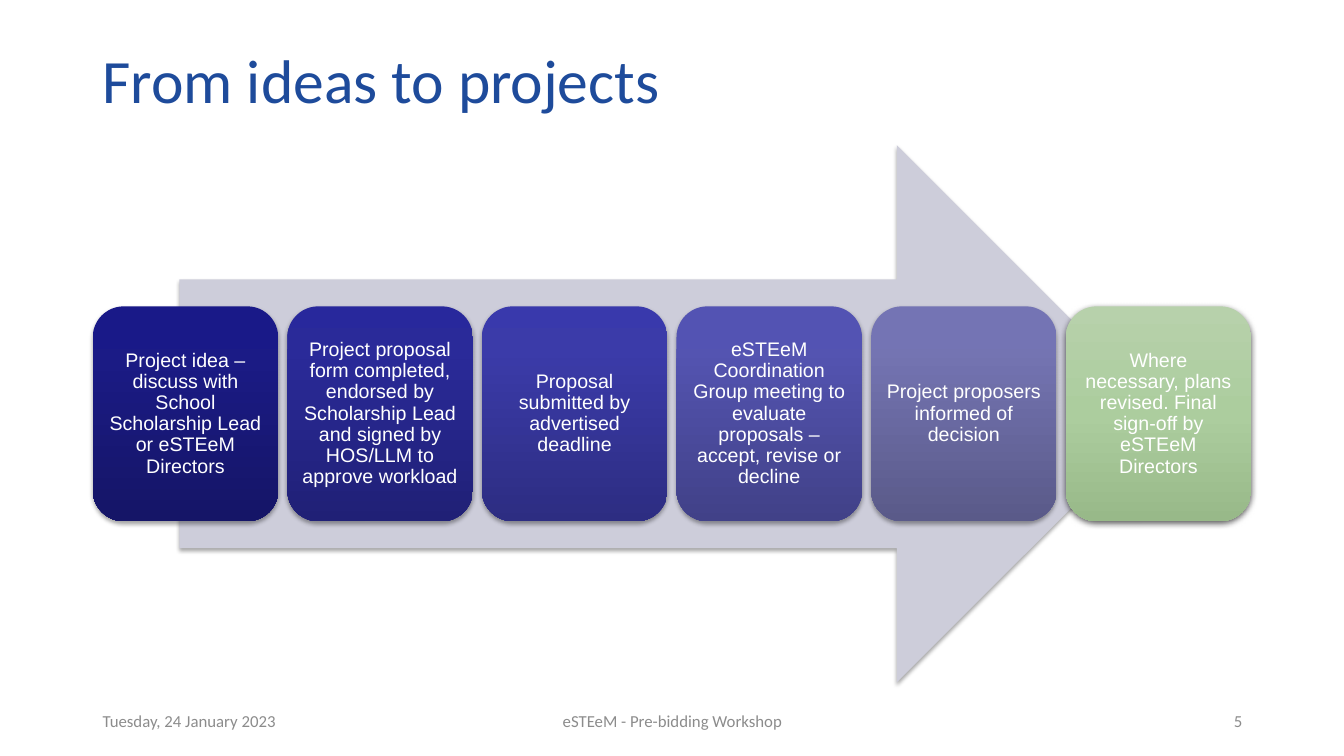
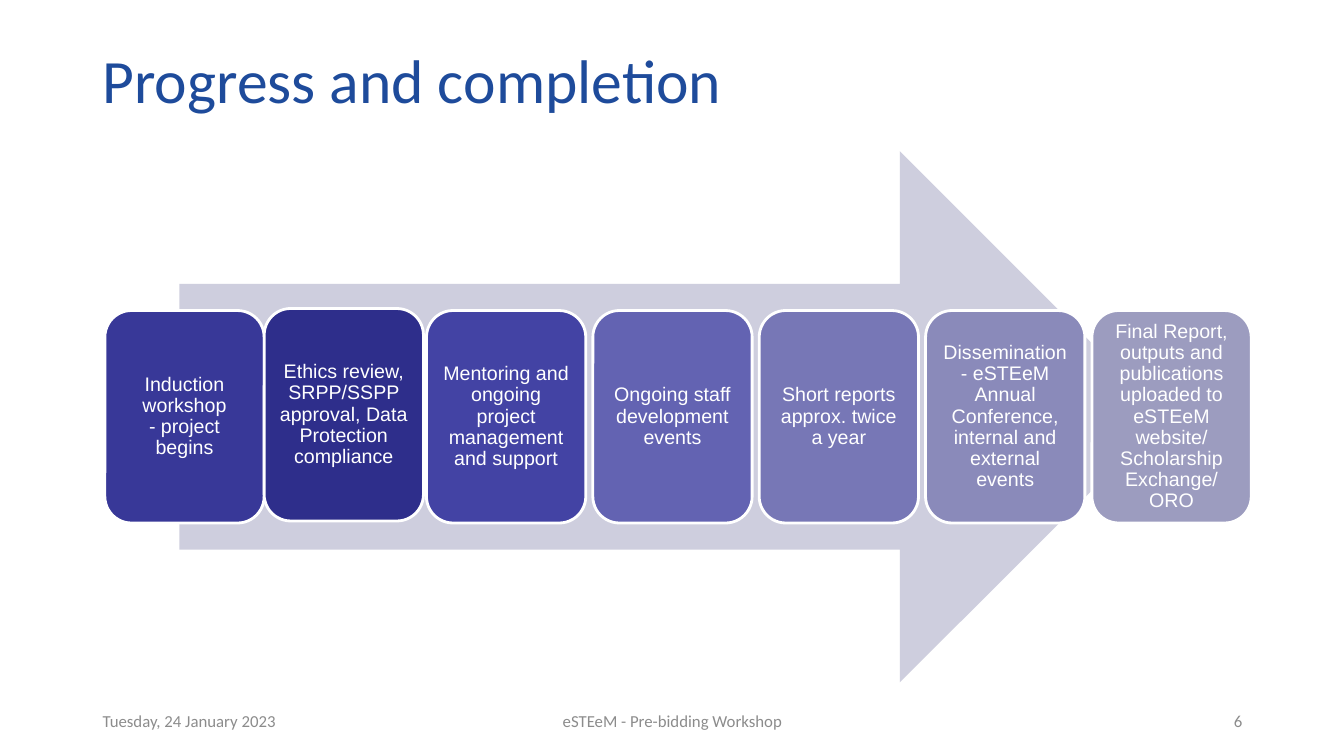
import copy
from dataclasses import dataclass
from typing import Optional

import lxml.etree
import pptx
import pptx.dml.color
import pptx.enum.shapes
import pptx.enum.text
import pptx.oxml.ns
import pptx.util

Inches = pptx.util.Inches
Pt = pptx.util.Pt
qn = pptx.oxml.ns.qn
ALIGN = pptx.enum.text.PP_ALIGN
SHAPES = pptx.enum.shapes.MSO_SHAPE


@dataclass(frozen=True)
class Theme:
    heading_font: str = "Calibri"
    step_font: str = "Arial"
    title_color: str = "1E4B9B"
    footer_color: str = "8C8C8C"
    white: str = "FFFFFF"
    title_size: int = 44
    footer_size: int = 12
    step_size: int = 14


@dataclass(frozen=True)
class Shadow:
    opacity: int
    blur: float
    distance: float


@dataclass(frozen=True)
class Step:
    """One box; several colors make a gradient from top to bottom."""
    text: str
    colors: tuple[str, ...]
    middle: int = 20
    shadow: Optional[Shadow] = None
    nudge: tuple[float, float] = (0, 0)


@dataclass(frozen=True)
class Process:
    title: str
    number: int
    arrow_top: float
    arrow_color: str
    first_left: float
    pitch: float
    step_width: float
    steps: tuple[Step, ...]
    outline: float = 0
    arrow_shadow: Optional[Shadow] = None


THEME = Theme()
MARGIN = 0.92
CONTENT_WIDTH = 11.5
ARROW_LEFT, ARROW_WIDTH, ARROW_BOTTOM = 1.78, 9.78, 6.77
SOFT = Shadow(35, 3.1, 1.8)
STRONG = Shadow(63, 4.5, 1.5)

PROCESSES = (
    Process(
        "From ideas to projects", 5, 1.44, "CDCDDA", MARGIN, 1.93, 1.84,
        (
            Step("Project idea – discuss with School Scholarship Lead or eSTEeM Directors",
                 ("191988", "1B1B86", "151567"), shadow=SOFT),
            Step("Project proposal form completed, endorsed by Scholarship Lead "
                 "and signed by HOS/LLM to approve workload",
                 ("28289C", "2A2A99", "202076"), shadow=SOFT),
            Step("Proposal submitted by advertised deadline",
                 ("3939AC", "3B3BA9", "2D2D82"), shadow=SOFT),
            Step("eSTEeM Coordination Group meeting to evaluate proposals – "
                 "accept, revise or decline",
                 ("5353B3", "5454B1", "414188"), shadow=SOFT),
            Step("Project proposers informed of decision",
                 ("7474B4", "7474B2", "5A5A89"), shadow=SOFT),
            Step("Where necessary, plans revised. Final sign-off by eSTEeM Directors",
                 ("B7D1AB", "ACCD9E", "98B989"), middle=50, shadow=STRONG),
        ),
        arrow_shadow=SOFT,
    ),
    Process(
        "Progress and completion", 6, 1.5, "CECEDE", 0.93, 1.65, 1.58,
        (
            Step("Induction workshop\n- project begins", ("383898",), nudge=(0.11, 0)),
            Step("Ethics review, SRPP/SSPP approval, Data Protection compliance",
                 ("2E2E8B",), nudge=(0.04, -0.02)),
            Step("Mentoring and ongoing project management and support", ("4343A4",)),
            Step("Ongoing staff development events", ("6363B2",)),
            Step("Short reports approx. twice a year", ("7777B6",)),
            Step("Dissemination - eSTEeM Annual Conference, internal and external events",
                 ("8A8ABA",)),
            Step("Final Report, outputs and publications uploaded to eSTEeM website/ "
                 "Scholarship Exchange/ ORO", ("9C9CBF",)),
        ),
        outline=2,
    ),
)


def rgb(code: str) -> pptx.dml.color.RGBColor:
    return pptx.dml.color.RGBColor.from_string(code)


def write(shape, text: str, font: str, size: int, color: str,
          align=ALIGN.LEFT, spacing: float = 1.0) -> None:
    frame = shape.text_frame
    frame.word_wrap = True
    frame.vertical_anchor = pptx.enum.text.MSO_ANCHOR.MIDDLE
    paragraph = frame.paragraphs[0]
    paragraph.alignment = align
    paragraph.line_spacing = spacing
    for index, line in enumerate(text.split("\n")):
        if index:
            paragraph.add_line_break()
        run = paragraph.add_run()
        run.text = line
        run.font.name = font
        run.font.size = Pt(size)
        run.font.color.rgb = rgb(color)


def add_label(slide, left: float, top: float, width: float, height: float):
    return slide.shapes.add_textbox(Inches(left), Inches(top), Inches(width), Inches(height))


def set_shadow(shape, shadow: Optional[Shadow]) -> None:
    shape.shadow.inherit = False
    if shadow is None:
        return
    effects = shape._element.spPr.find(qn("a:effectLst"))
    outer = lxml.etree.SubElement(
        effects, qn("a:outerShdw"), blurRad=str(Pt(shadow.blur)),
        dist=str(Pt(shadow.distance)), dir="5400000", rotWithShape="0")
    color = lxml.etree.SubElement(outer, qn("a:srgbClr"), val="000000")
    lxml.etree.SubElement(color, qn("a:alpha"), val=str(shadow.opacity * 1000))


def set_fill(shape, colors: tuple[str, ...], middle: int = 20) -> None:
    if len(colors) == 1:
        shape.fill.solid()
        shape.fill.fore_color.rgb = rgb(colors[0])
        return
    shape.fill.gradient()
    shape.fill.gradient_angle = 270
    stop_list = shape._element.spPr.find(".//" + qn("a:gsLst"))
    stop_list.append(copy.deepcopy(stop_list[0]))
    for stop, color, percent in zip(shape.fill.gradient_stops, colors, (0, middle, 100)):
        stop.color.rgb = rgb(color)
        stop.position = percent / 100


def add_block(slide, kind, left: float, top: float, width: float, height: float,
              outline: float = 0, shadow: Optional[Shadow] = None):
    block = slide.shapes.add_shape(
        kind, Inches(left), Inches(top), Inches(width), Inches(height))
    if outline:
        block.line.color.rgb = rgb(THEME.white)
        block.line.width = Pt(outline)
    else:
        block.line.fill.background()
    set_shadow(block, shadow)
    return block


def add_title_and_footer(slide, process: Process) -> None:
    write(add_label(slide, MARGIN, 0.4, CONTENT_WIDTH, 0.85), process.title,
          THEME.heading_font, THEME.title_size, THEME.title_color, spacing=0.9)
    footers = (
        ("Tuesday, 24 January 2023", MARGIN, 3, ALIGN.LEFT),
        ("eSTEeM - Pre-bidding Workshop", 4.42, 4.5, ALIGN.CENTER),
        (str(process.number), 9.42, 3, ALIGN.RIGHT),
    )
    for text, left, width, align in footers:
        write(add_label(slide, left, 6.95, width, 0.4), text, THEME.heading_font,
              THEME.footer_size, THEME.footer_color, align)


def add_process(slide, process: Process) -> None:
    """Draw the arrow and its steps, which fill the middle 40% of its height."""
    arrow_height = ARROW_BOTTOM - process.arrow_top
    arrow = add_block(slide, SHAPES.RIGHT_ARROW, ARROW_LEFT, process.arrow_top,
                      ARROW_WIDTH, arrow_height, shadow=process.arrow_shadow)
    set_fill(arrow, (process.arrow_color,))
    step_top = process.arrow_top + 0.3 * arrow_height
    for index, step in enumerate(process.steps):
        shift_x, shift_y = step.nudge
        box = add_block(
            slide, SHAPES.ROUNDED_RECTANGLE,
            process.first_left + index * process.pitch + shift_x, step_top + shift_y,
            process.step_width, 0.4 * arrow_height, process.outline, step.shadow)
        set_fill(box, step.colors, step.middle)
        frame = box.text_frame
        frame.margin_left = frame.margin_right = Inches(0.06)
        frame.margin_top = frame.margin_bottom = Inches(0.06)
        write(box, step.text, THEME.step_font, THEME.step_size, THEME.white,
              ALIGN.CENTER, 0.9)


def main() -> None:
    deck = pptx.Presentation()
    deck.slide_width, deck.slide_height = Inches(13.33), Inches(7.5)
    for process in PROCESSES:
        slide = deck.slides.add_slide(deck.slide_layouts[6])
        add_title_and_footer(slide, process)
        add_process(slide, process)
    deck.save("out.pptx")


if __name__ == "__main__":
    main()
